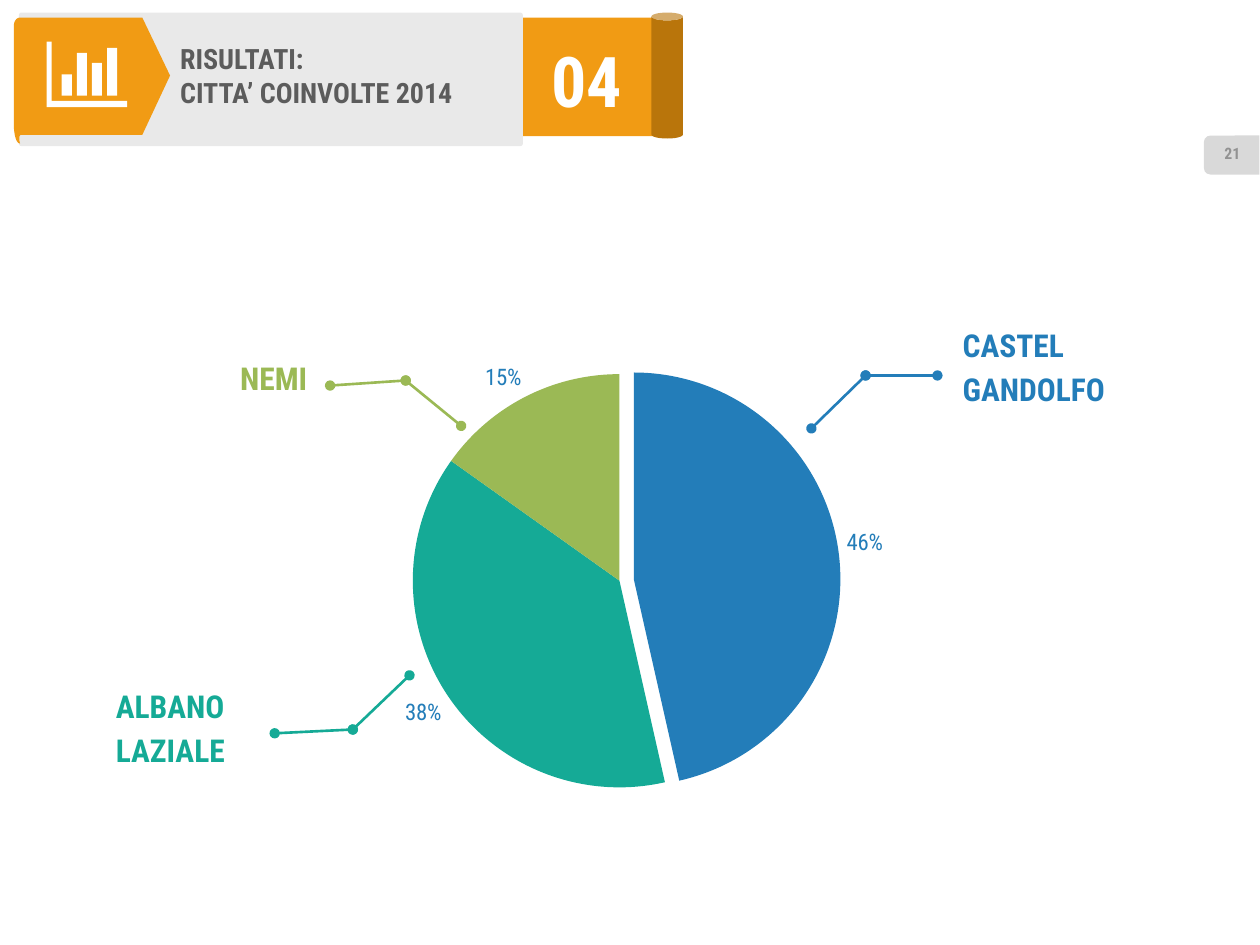
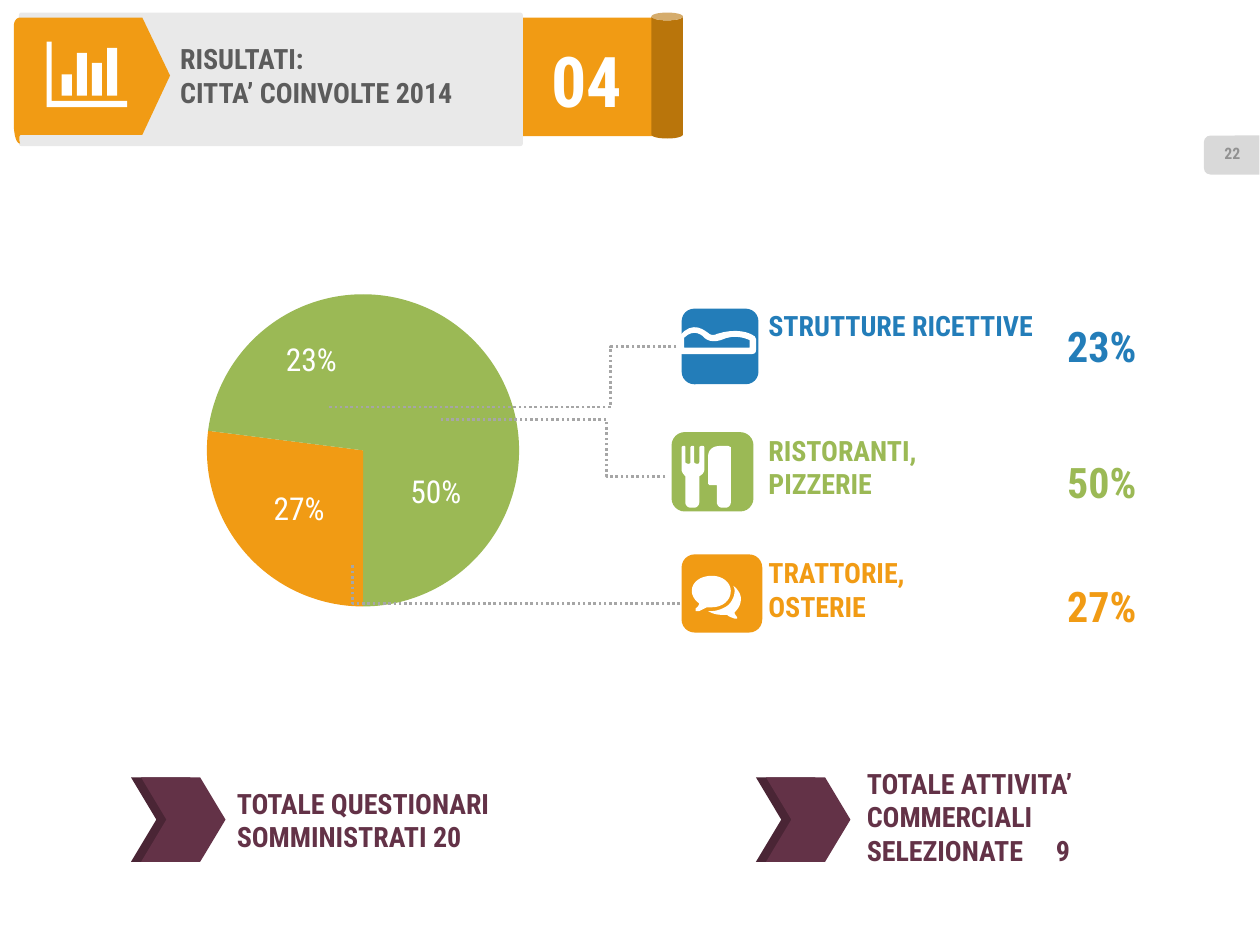
from dataclasses import dataclass

from lxml.etree import SubElement
from pptx import Presentation
from pptx.chart.data import CategoryChartData
from pptx.dml.color import RGBColor
from pptx.enum.chart import XL_CHART_TYPE as ChartKind, XL_LABEL_POSITION as LabelSpot
from pptx.enum.dml import MSO_LINE as Dash
from pptx.enum.shapes import MSO_CONNECTOR as Link, MSO_SHAPE as Preset
from pptx.enum.text import MSO_ANCHOR as Anchor, MSO_AUTO_SIZE as AutoSize, PP_ALIGN as Align
from pptx.oxml import parse_xml
from pptx.oxml.ns import nsdecls, qn
from pptx.util import Inches, Pt


@dataclass(frozen=True)
class Theme:
    """Colours, font and type sizes of the deck."""
    font: str = "Roboto Condensed"
    blue: str = "237DB9"
    teal: str = "15AA96"
    green: str = "9BB955"
    orange: str = "F19B14"
    brown: str = "B9750B"
    plum: str = "633247"
    dark_plum: str = "4A2535"
    band: str = "E9E9E9"
    badge: str = "D9D9D9"
    badge_text: str = "929292"
    title_text: str = "5C5C5C"
    dots: str = "A6A6A6"
    white: str = "FFFFFF"
    tiny: int = 9
    label: int = 13
    text: int = 16
    city: int = 18
    share: int = 24
    number: int = 40


THEME = Theme()

RIBBON = [[(1.13, 0.14), (0.16, 0.14), (0.13, 0.14, 0.11, 0.17, 0.11, 0.21), (0.11, 0.99),
           (0.11, 1.03, 0.12, 1.14, 0.16, 1.14), (0.16, 1.14, 0.14, 1.07, 0.17, 1.07),
           (1.13, 1.07), (1.35, 0.6)]]
BED = [[(5.63, 2.65), (5.66, 2.67, 5.69, 2.65, 5.69, 2.65), (5.85, 2.6, 5.95, 2.64, 5.99, 2.67),
        (6, 2.69), (6, 2.78), (6, 2.81, 5.97, 2.81, 5.97, 2.81), (5.41, 2.81),
        (5.38, 2.81, 5.39, 2.78, 5.39, 2.78), (5.39, 2.67), (5.5, 2.53, 5.6, 2.63, 5.63, 2.65)],
       [(5.43, 2.68), (5.43, 2.76), (5.95, 2.76), (5.95, 2.7),
        (5.95, 2.7, 5.84, 2.64, 5.72, 2.7), (5.62, 2.73, 5.58, 2.67, 5.58, 2.67),
        (5.58, 2.67, 5.51, 2.6, 5.43, 2.68)]]
CUTLERY = [[(5.59, 3.73), (5.59, 3.75, 5.57, 3.77, 5.55, 3.78), (5.55, 3.99),
            (5.55, 4.01, 5.53, 4.03, 5.51, 4.03), (5.48, 4.03),
            (5.46, 4.03, 5.44, 4.01, 5.44, 3.99), (5.44, 3.78),
            (5.43, 3.77, 5.41, 3.75, 5.41, 3.73), (5.41, 3.55),
            (5.41, 3.54, 5.44, 3.53, 5.44, 3.55), (5.44, 3.67),
            (5.44, 3.68, 5.48, 3.69, 5.48, 3.67), (5.48, 3.55),
            (5.48, 3.54, 5.51, 3.53, 5.51, 3.55), (5.51, 3.67),
            (5.51, 3.68, 5.55, 3.69, 5.55, 3.67), (5.55, 3.55),
            (5.55, 3.54, 5.59, 3.53, 5.59, 3.55)],
           [(5.8, 3.99), (5.8, 4.01, 5.78, 4.03, 5.76, 4.03), (5.73, 4.03),
            (5.71, 4.03, 5.69, 4.01, 5.69, 3.99), (5.69, 3.85), (5.63, 3.85), (5.62, 3.84),
            (5.62, 3.62), (5.62, 3.57, 5.66, 3.54, 5.71, 3.54), (5.78, 3.54), (5.8, 3.55)]]
BUBBLES = [[(5.65, 4.82), (5.63, 4.82, 5.62, 4.82, 5.61, 4.82),
            (5.59, 4.83, 5.57, 4.84, 5.55, 4.85), (5.53, 4.85), (5.52, 4.85), (5.52, 4.83),
            (5.53, 4.82, 5.54, 4.82, 5.55, 4.79), (5.52, 4.77, 5.49, 4.73, 5.49, 4.69),
            (5.49, 4.62, 5.56, 4.57, 5.65, 4.57), (5.73, 4.57, 5.8, 4.62, 5.8, 4.69),
            (5.8, 4.77, 5.73, 4.82, 5.65, 4.82)],
           [(5.83, 4.86), (5.83, 4.88, 5.84, 4.88, 5.85, 4.9), (5.85, 4.91), (5.83, 4.91),
            (5.81, 4.9, 5.79, 4.9, 5.77, 4.88), (5.76, 4.88, 5.75, 4.88, 5.73, 4.88),
            (5.69, 4.88, 5.65, 4.87, 5.62, 4.85), (5.65, 4.85),
            (5.69, 4.85, 5.74, 4.83, 5.77, 4.81), (5.81, 4.78, 5.83, 4.73, 5.83, 4.69),
            (5.83, 4.68, 5.83, 4.67, 5.82, 4.65), (5.86, 4.68, 5.88, 4.72, 5.88, 4.75),
            (5.88, 4.8, 5.86, 4.83, 5.83, 4.86)]]


def inches(values):
    """Turn numbers into lengths."""
    return [Inches(value) for value in values]


def set_all(target, **values):
    """Set each named attribute of the target."""
    for name, value in values.items():
        setattr(target, name, value)


def set_font(font, size, colour, bold=False):
    """Give a font the deck's typeface, a size and a colour."""
    set_all(font, name=THEME.font, size=Pt(size), bold=bold)
    font.color.rgb = RGBColor.from_string(colour)


def paint(shape, colour):
    """Give a shape a flat fill without line or shadow."""
    shape.fill.solid()
    shape.fill.fore_color.rgb = RGBColor.from_string(colour)
    shape.line.fill.background()
    shape.shadow.inherit = False


def add_preset(page, kind, at, colour, adjust=None, turn=0):
    """Add a flat preset shape."""
    shape = page.shapes.add_shape(kind, *inches(at))
    paint(shape, colour)
    shape.rotation = turn
    if adjust is not None:
        shape.adjustments[0] = adjust


def flatten(contour, steps=8):
    """Yield the points of a contour whose six-number entries are cubic curves."""
    last = contour[0]
    for entry in contour:
        if len(entry) == 2:
            yield tuple(inches(entry))
        else:
            nodes = [last, entry[:2], entry[2:4], entry[4:]]
            for t in (step / steps for step in range(1, steps + 1)):
                weights = [(1 - t) ** 3, 3 * t * (1 - t) ** 2, 3 * t * t * (1 - t), t ** 3]
                yield tuple(Inches(sum(w * node[axis] for w, node in zip(weights, nodes)))
                            for axis in (0, 1))
        last = entry[-2:]


def add_outline(page, contours, colour):
    """Add one filled freeform made of closed contours."""
    builder = None
    for contour in contours:
        start, *rest = flatten(contour)
        if builder is None:
            builder = page.shapes.build_freeform(*start)
        else:
            builder.move_to(*start)
        builder.add_line_segments(rest, close=True)
    paint(builder.convert_to_shape(), colour)


def write(frame, lines, size, colour, align=Align.LEFT, anchor=Anchor.TOP, inset=(0, 0), gap=0):
    """Fill a text frame with bold paragraphs."""
    side, top = inches(inset)
    set_all(frame, word_wrap=True, auto_size=AutoSize.NONE, vertical_anchor=anchor,
            margin_left=side, margin_right=side, margin_top=top, margin_bottom=top)
    frame.text = "\n".join(lines)
    for order, para in enumerate(frame.paragraphs):
        para.alignment = align
        if order:
            para.space_before = Pt(gap)
        for span in para.runs:
            set_font(span.font, size, colour, True)


def add_text(page, at, lines, size, colour, **layout):
    """Add a text box."""
    box = page.shapes.add_textbox(*inches(at))
    write(box.text_frame, lines, size, colour, **layout)


def add_link(page, kind, start, end, colour):
    """Add a connector without shadow and return it with its line element."""
    link = page.shapes.add_connector(kind, *inches(start + end))
    link.line.width = Pt(1.5)
    link.line.color.rgb = RGBColor.from_string(colour)
    SubElement(link.element.spPr, qn("a:effectLst"))
    return link, link.element.spPr.find(qn("a:ln"))


def add_leader(page, stops, colour):
    """Join stops with lines that end in dots."""
    for start, end in zip(stops, stops[1:]):
        _, line = add_link(page, Link.STRAIGHT, start, end, colour)
        for tip in ("a:headEnd", "a:tailEnd"):
            SubElement(line, qn(tip), type="oval")


def add_elbow(page, start, end, bend):
    """Add a dotted elbow whose upright part stands at the share bend of its width."""
    link, _ = add_link(page, Link.ELBOW, start, end, THEME.dots)
    link.line.dash_style = Dash.ROUND_DOT
    guides = link.element.spPr.find(qn("a:prstGeom")).get_or_add_avLst()
    SubElement(guides, qn("a:gd"), name="adj1", fmla=f"val {round(bend * 100000)}")


def manual_layout(**values):
    """Make a chart layout element."""
    items = "".join(f'<c:{name} val="{value}"/>' for name, value in values.items())
    return parse_xml(f'<c:layout {nsdecls("c")}><c:manualLayout>{items}'
                     '</c:manualLayout></c:layout>')


def add_pie(page, at, slices, colours, plot_box, size, label_colour, spot, shifts=(), burst=0):
    """Add a pie chart with percentages, label shifts and a burst first slice."""
    data = CategoryChartData(number_format="0%")
    data.categories = list(slices)
    data.add_series("Series 1", list(slices.values()))
    chart = page.shapes.add_chart(ChartKind.PIE, *inches(at), data).chart
    set_all(chart, has_legend=False, has_title=False)
    set_font(chart.font, size, label_colour)
    plot = chart.plots[0]
    plot.vary_by_categories = True
    series = plot.series[0]
    set_all(series.data_labels, show_value=True, number_format="0%",
            number_format_is_linked=False)
    for order, colour in enumerate(colours):
        point = series.points[order]
        point.format.fill.solid()
        point.format.fill.fore_color.rgb = RGBColor.from_string(colour)
        set_font(point.data_label.font, size, label_colour)
        point.data_label.position = spot
    for label, (x, y) in zip(chart.element.xpath(".//c:dLbl"), shifts):
        label.insert(1, manual_layout(x=x, y=y))
    if burst:
        fill = chart.element.xpath(".//c:dPt/c:spPr")[0]
        fill.addprevious(parse_xml(f'<c:explosion {nsdecls("c")} val="{burst}"/>'))
    area = chart.element.xpath(".//c:plotArea")[0]
    for old in area.findall(qn("c:layout")):
        area.remove(old)
    area.insert(0, manual_layout(layoutTarget="inner", xMode="edge", yMode="edge",
                                 **dict(zip("xywh", plot_box))))


def add_bar_icon(page):
    """Add the white bar chart icon of the header."""
    axes = [(1.01, 0.85), (0.37, 0.85), (0.37, 0.33), (0.41, 0.33), (0.41, 0.8), (1.01, 0.8)]
    bars = [[(x, 0.76), (x, top), (x + 0.08, top), (x + 0.08, 0.76)]
            for x, top in ((0.49, 0.59), (0.61, 0.42), (0.73, 0.5), (0.85, 0.38))]
    add_outline(page, [axes, *bars], THEME.white)


def add_page(deck, number):
    """Add a page with its header band, title and page number."""
    page = deck.slides.add_slide(deck.slide_layouts[5])
    add_preset(page, Preset.ROUND_2_SAME_RECTANGLE, (9.62, 1.01, 0.31, 0.44), THEME.badge, turn=270)
    add_text(page, (9.57, 1.07, 0.42, 0.3), [number], THEME.tiny, THEME.badge_text,
             align=Align.CENTER, anchor=Anchor.MIDDLE)
    add_preset(page, Preset.RECTANGLE, (1.65, 0.14, 3.56, 0.94), THEME.orange)
    add_preset(page, Preset.ROUNDED_RECTANGLE, (0.15, 0.1, 4, 1.06), THEME.band, 0.02)
    add_outline(page, RIBBON, THEME.orange)
    add_preset(page, Preset.CAN, (5.17, 0.1, 0.25, 1), THEME.brown)
    add_text(page, (4.28, 0.25, 0.83, 0.77), ["04"], THEME.number, THEME.white, inset=(0.1, 0.05))
    add_bar_icon(page)
    title = page.shapes.title
    set_all(title, **dict(zip(("left", "top", "width", "height"), inches((1.43, 0.33, 2.62, 0.54)))))
    write(title.text_frame, ["RISULTATI:", "CITTA’ COINVOLTE 2014"], THEME.text,
          THEME.title_text, anchor=Anchor.MIDDLE)
    page.shapes.element.append(title.element)
    return page


def add_cities(deck):
    """Add the page with the share of each city."""
    page = add_page(deck, "21")
    add_pie(page, (2.22, 2.71, 5.56, 3.69),
            {"Castel Gandolfo": 0.46, "Albano Laziale": 0.38, "Nemi": 0.15},
            (THEME.blue, THEME.teal, THEME.green), (0.19, 0.07, 0.59, 0.89),
            THEME.label, THEME.blue, LabelSpot.OUTSIDE_END, burst=7)
    cities = [
        ((0.92, 5.44, 2.03, 0.67), ["ALBANO", "LAZIALE"], THEME.teal, Align.LEFT,
         [(2.18, 5.82), (2.8, 5.79), (3.25, 5.36)]),
        ((1.81, 2.85, 0.63, 0.3), ["NEMI"], THEME.green, Align.RIGHT,
         [(2.62, 3.06), (3.22, 3.02), (3.66, 3.38)]),
        ((7.64, 2.58, 1.44, 0.67), ["CASTEL", "GANDOLFO"], THEME.blue, Align.LEFT,
         [(6.44, 3.4), (6.87, 2.98), (7.44, 2.98)])]
    for at, lines, colour, align, stops in cities:
        add_text(page, at, lines, THEME.city, colour, align=align, anchor=Anchor.MIDDLE, gap=3.6)
        add_leader(page, stops, colour)


def add_venues(deck):
    """Add the page with the kinds of venue and the totals."""
    page = add_page(deck, "22")
    add_pie(page, (0.88, 2.03, 4.17, 3.06), {"1": 0.5, "2": 0.27, "3": 0.23},
            (THEME.green, THEME.orange, THEME.green), (0.18, 0.1, 0.6, 0.81),
            THEME.city, THEME.white, LabelSpot.CENTER,
            shifts=((-0.01, 0.11), (-0.01, 0.02), (0, -0.08)))
    venues = [
        (["STRUTTURE RICETTIVE"], "23%", THEME.blue, 2.4, 2.54, (5.41, 2.45, 0.61, 0.6), BED,
         ((5.41, 2.75), (2.6, 3.23), 0.2)),
        (["RISTORANTI,", "PIZZERIE"], "50%", THEME.green, 3.39, 3.62, (5.33, 3.43, 0.65, 0.63),
         CUTLERY, ((5.28, 3.78), (3.49, 3.33), 0.26)),
        (["TRATTORIE,", "OSTERIE"], "27%", THEME.orange, 4.36, 4.61, (5.41, 4.4, 0.64, 0.62),
         BUBBLES, ((5.44, 4.79), (2.8, 4.47), 1))]
    for lines, share, colour, top, share_top, tile, icon, elbow in venues:
        add_text(page, (6, top, 2.71, 0.64), lines, THEME.text, colour, inset=(0.1, 0.05))
        add_text(page, (8.41, share_top, 0.67, 0.4), [share], THEME.share, colour,
                 align=Align.CENTER, anchor=Anchor.BOTTOM)
        add_elbow(page, *elbow)
        add_preset(page, Preset.ROUNDED_RECTANGLE, tile, colour)
        add_outline(page, icon, THEME.white)
    totals = [(1.04, 1.88, 6.24, 0.75, "TOTALE QUESTIONARI SOMMINISTRATI 20"),
              (6, 6.88, 6.08, 1.02, "TOTALE ATTIVITA’ COMMERCIALI SELEZIONATE\t9")]
    for left, text_left, top, height, words in totals:
        for offset, colour in ((0, THEME.dark_plum), (0.08, THEME.plum)):
            add_preset(page, Preset.CHEVRON, (left + offset, 6.17, 0.67, 0.67), colour, 0.3)
        add_text(page, (text_left, top, 2.54, height), [words], THEME.text, THEME.plum)


def main():
    """Build and save the deck."""
    deck = Presentation()
    set_all(deck, slide_width=Inches(10), slide_height=Inches(7.5))
    add_cities(deck)
    add_venues(deck)
    deck.save("out.pptx")


if __name__ == "__main__":
    main()
